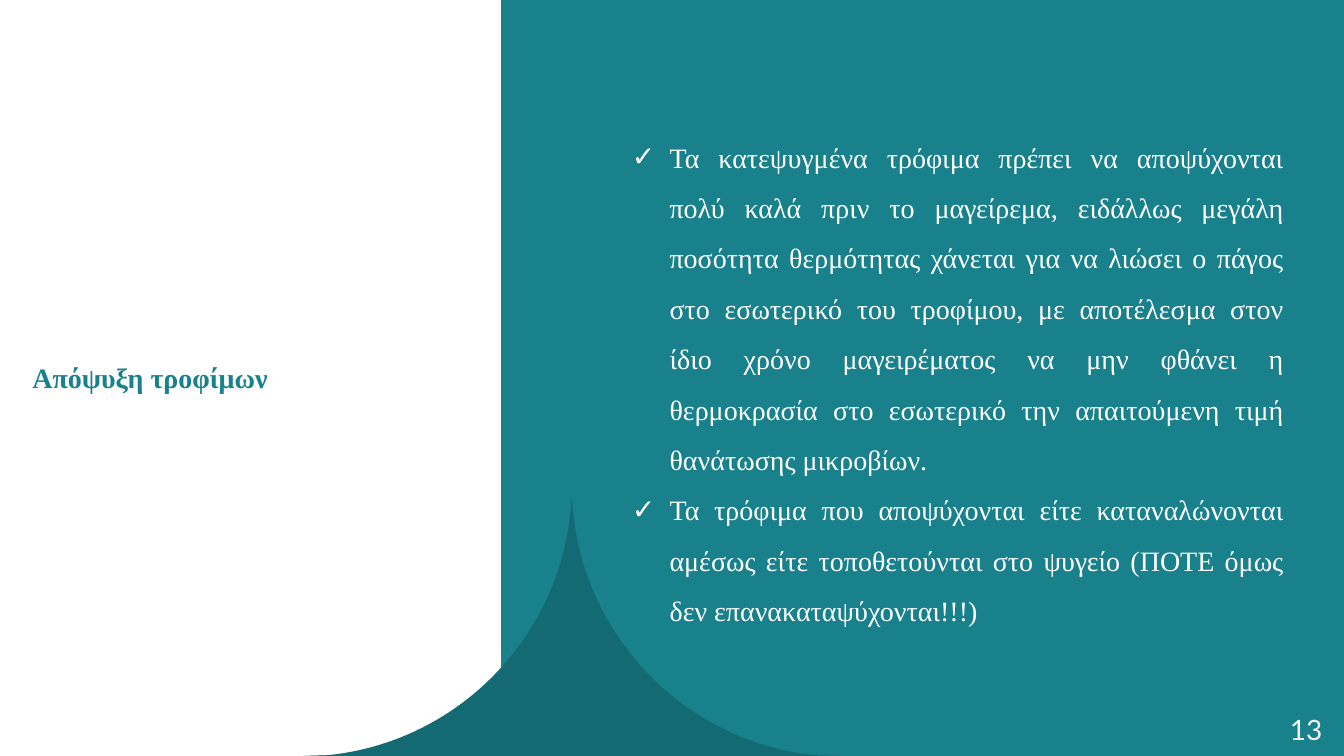
from dataclasses import dataclass

from lxml import etree
from pptx import Presentation
from pptx import util as u
from pptx.dml.color import RGBColor
from pptx.enum import shapes, text
from pptx.oxml import ns


@dataclass(frozen=True)
class Theme:
    teal: str = "18818C"
    dark_teal: str = "126169"
    white: str = "FFFFFF"
    cream: str = "F4F2EC"
    serif: str = "Times New Roman"
    sans: str = "Lato"
    size: int = 20


@dataclass(frozen=True)
class Box:
    left: float
    top: float
    width: float
    height: float

    def lengths(self):
        return [u.Cm(side) for side in (self.left, self.top, self.width, self.height)]


THEME = Theme()
PAGE = Box(0, 0, 33.87, 19.05)
HEADING = "Απόψυξη τροφίμων"
ADVICE = [
    "Τα κατεψυγμένα τρόφιμα πρέπει να αποψύχονται πολύ καλά πριν το μαγείρεμα, "
    "ειδάλλως μεγάλη ποσότητα θερμότητας χάνεται για να λιώσει ο πάγος στο εσωτερικό "
    "του τροφίμου, με αποτέλεσμα στον ίδιο χρόνο μαγειρέματος να μην φθάνει η "
    "θερμοκρασία στο εσωτερικό την απαιτούμενη τιμή θανάτωσης μικροβίων.",
    "Τα τρόφιμα που αποψύχονται είτε καταναλώνονται αμέσως είτε τοποθετούνται στο "
    "ψυγείο (ΠΟΤΕ όμως δεν επανακαταψύχονται!!!)",
]


def paint(shape, color, opacity=100):
    shape.shadow.inherit = False
    shape.line.fill.background()
    shape.fill.solid()
    shape.fill.fore_color.rgb = RGBColor.from_string(color)
    if opacity < 100:
        tint = shape.fill._xPr.find(".//" + ns.qn("a:srgbClr"))
        etree.SubElement(tint, ns.qn("a:alpha"), val=str(opacity * 1000))


def place(holder, box, anchor, wrap=True):
    holder.left, holder.top, holder.width, holder.height = box.lengths()
    frame = holder.text_frame
    frame.auto_size = text.MSO_AUTO_SIZE.NONE
    frame.vertical_anchor = anchor
    frame.word_wrap = wrap
    return frame


def write(paragraph, words, color, font, align, bold=False):
    paragraph.alignment = align
    run = paragraph.add_run()
    run.text = words
    run.font.size = u.Pt(THEME.size)
    run.font.name = font
    run.font.bold = bold
    run.font.color.rgb = RGBColor.from_string(color)


def add_panel(slide, box, color):
    panel = slide.shapes.add_shape(shapes.MSO_SHAPE.RECTANGLE, *box.lengths())
    paint(panel, color)


def bend(segment, handles, shape):
    segment.tag = ns.qn("a:cubicBezTo")
    for position, (x, y) in enumerate(handles):
        handle = etree.Element(ns.qn("a:pt"), x=str(x - shape.left), y=str(y - shape.top))
        segment.insert(position, handle)


def add_peak(slide, box):
    center, half, height = box.left + box.width / 2, box.width / 2, box.height

    def mirrored(offset, drop):
        return [(u.Cm(center + side * offset), u.Cm(box.top + drop)) for side in (-1, 1)]

    corner, foot = mirrored(half, height), mirrored(half - 0.63, height - 0.02)
    low, high = mirrored(2.9, 6.18), mirrored(0.34, 3.59)
    neck, tip = mirrored(0.03, 0.36), mirrored(0, 0)
    outline = [foot[0], neck[0], tip[0], neck[1], foot[1], corner[1]]
    curves = {1: (low[0], high[0]), 4: (high[1], low[1])}

    for color, opacity in ((THEME.teal, 100), (THEME.dark_teal, 70)):
        builder = slide.shapes.build_freeform(*corner[0])
        builder.add_line_segments(outline, close=True)
        peak = builder.convert_to_shape()
        segments = list(peak._element.iter(ns.qn("a:lnTo")))
        for index, handles in curves.items():
            bend(segments[index], handles, peak)
        paint(peak, color, opacity)


def add_heading(slide, box):
    frame = place(slide.shapes.title, box, text.MSO_ANCHOR.TOP, wrap=False)
    write(frame.paragraphs[0], HEADING, THEME.teal, THEME.serif,
          text.PP_ALIGN.LEFT, bold=True)


def add_advice(slide, box):
    frame = place(slide.placeholders[1], box, text.MSO_ANCHOR.TOP)
    indent = u.Cm(0.95)
    for index, advice in enumerate(ADVICE):
        paragraph = frame.add_paragraph() if index else frame.paragraphs[0]
        write(paragraph, advice, THEME.white, THEME.serif, text.PP_ALIGN.JUSTIFY)
        paragraph.line_spacing = 1.5
        paragraph.space_before = paragraph.space_after = u.Pt(0)
        properties = paragraph._p.get_or_add_pPr()
        properties.set("marL", str(indent))
        properties.set("indent", str(-indent))
        etree.SubElement(properties, ns.qn("a:buChar"), char="✓")


def add_page_number(slide, box):
    number = slide.shapes.add_textbox(*box.lengths())
    frame = place(number, box, text.MSO_ANCHOR.MIDDLE)
    write(frame.paragraphs[0], "13", THEME.cream, THEME.sans, text.PP_ALIGN.RIGHT)


def send_text_forward(slide):
    tree = slide.shapes._spTree
    for holder in list(slide.placeholders):
        tree.append(holder._element)


def build_defrosting_slide(deck, page):
    slide = deck.slides.add_slide(deck.slide_layouts[1])
    split = 12.63
    add_panel(slide, page, THEME.white)
    add_panel(slide, Box(split, page.top, page.width - split, page.height), THEME.teal)
    add_peak(slide, Box(7.65, page.height - 6.53, 13.52, 6.53))
    add_page_number(slide, Box(page.width - 2.22, page.height - 1.17, 1.93, 1.02))
    add_heading(slide, Box(0.56, 8.95, 6.5, 1.12))
    add_advice(slide, Box(15.67, 2.98, 16.94, 12.93))
    send_text_forward(slide)


def main():
    deck = Presentation()
    deck.slide_width, deck.slide_height = u.Cm(PAGE.width), u.Cm(PAGE.height)
    build_defrosting_slide(deck, PAGE)
    deck.save("out.pptx")


if __name__ == "__main__":
    main()
